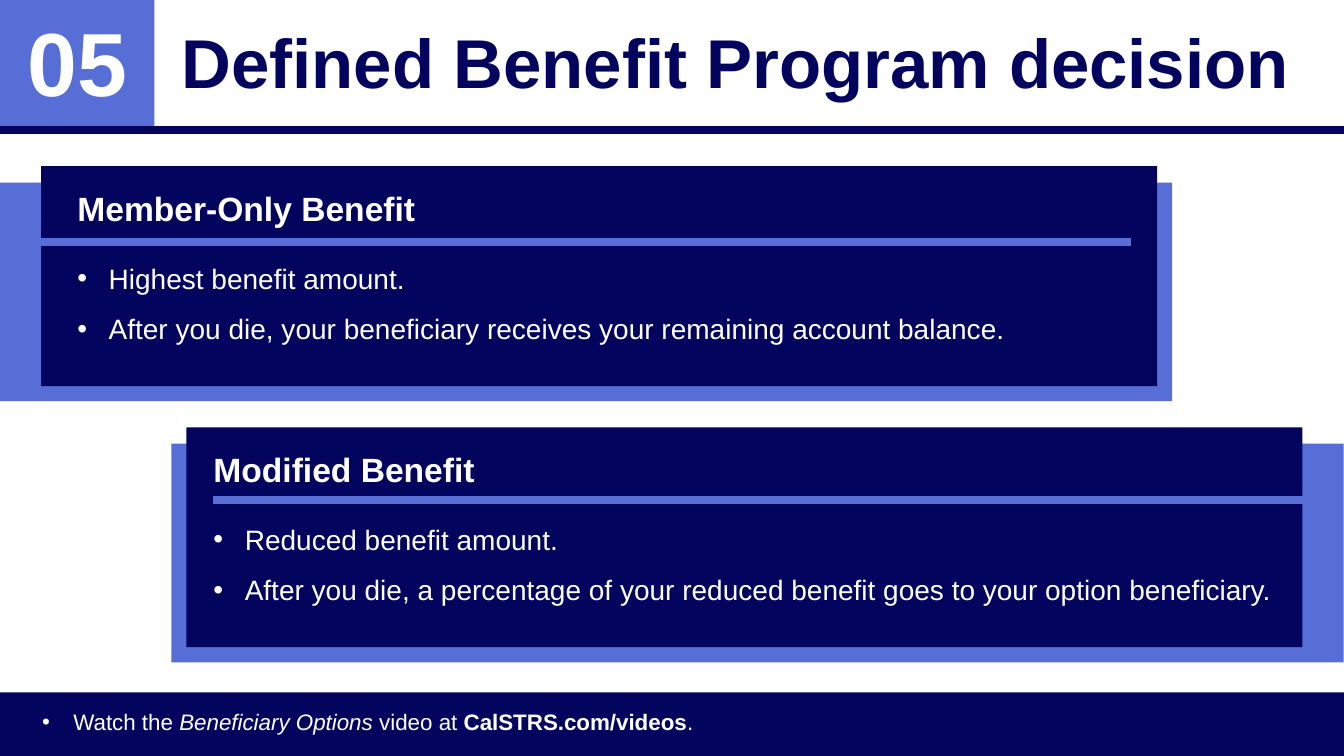
import pptx
import pptx.dml.color
import pptx.enum.shapes
import pptx.enum.text
import pptx.oxml
import pptx.oxml.ns
import pptx.util
from pptx.util import Cm

NAVY = "03045E"
PERIWINKLE = "576ED6"
WHITE = "FFFFFF"
FONT = "Arial"
SLIDE_WIDTH, SLIDE_HEIGHT = 33.87, 19.05
HEADER_HEIGHT = 3.28
FOOTER_TOP = 17.45
INDENT = 0.79


def rgb(hex_colour):
    """Turn a hex string into a colour."""
    return pptx.dml.color.RGBColor.from_string(hex_colour)


def add_block(slide, left, top, width, height, colour):
    """Add a plain filled rectangle."""
    block = slide.shapes.add_shape(
        pptx.enum.shapes.MSO_SHAPE.RECTANGLE, Cm(left), Cm(top), Cm(width), Cm(height))
    block.shadow.inherit = False
    block.fill.solid()
    block.fill.fore_color.rgb = rgb(colour)
    block.line.fill.background()


def add_rule(slide, left, right, y, colour):
    """Add a thick horizontal line."""
    rule = slide.shapes.add_connector(
        pptx.enum.shapes.MSO_CONNECTOR.STRAIGHT, Cm(left), Cm(y), Cm(right), Cm(y))
    rule.line.color.rgb = rgb(colour)
    rule.line.width = pptx.util.Pt(6)
    rule._element.spPr.append(pptx.oxml.parse_xml(
        f"<a:effectLst {pptx.oxml.ns.nsdecls('a')}/>"))


def add_text_frame(slide, left, top, width, height):
    """Add a wrapping text box that grows with its text and return its frame."""
    frame = slide.shapes.add_textbox(Cm(left), Cm(top), Cm(width), Cm(height)).text_frame
    frame.word_wrap = True
    frame.auto_size = pptx.enum.text.MSO_AUTO_SIZE.SHAPE_TO_FIT_TEXT
    return frame


def style_runs(paragraph, size, colour=WHITE, bold=False):
    """Format every run of a paragraph alike."""
    for run in paragraph.runs:
        run.font.name = FONT
        run.font.size = pptx.util.Pt(size)
        run.font.color.rgb = rgb(colour)
        run.font.bold = bold


def add_bullet(paragraph):
    """Give a paragraph a round bullet with a hanging indent."""
    properties = paragraph._p.get_or_add_pPr()
    properties.set("marL", str(Cm(INDENT)))
    properties.set("indent", str(-Cm(INDENT)))
    for bullet_part in ('buFont typeface="Arial"', 'buChar char="•"'):
        tag, attribute = bullet_part.split(" ")
        properties.append(pptx.oxml.parse_xml(
            f"<a:{tag} {pptx.oxml.ns.nsdecls('a')} {attribute}/>"))


def set_heading(frame, text, size, colour, alignment):
    """Fill a frame with one large, vertically centred bold line."""
    frame.text = text
    frame.word_wrap = True
    frame.auto_size = pptx.enum.text.MSO_AUTO_SIZE.NONE
    frame.vertical_anchor = pptx.enum.text.MSO_ANCHOR.MIDDLE
    heading = frame.paragraphs[0]
    heading.alignment = alignment
    heading.line_spacing = 0.9
    style_runs(heading, size, colour, bold=True)


def add_header(slide, number, title):
    """Build the numbered badge, the title and the rule below them."""
    add_block(slide, 0, 0, 3.89, HEADER_HEIGHT, PERIWINKLE)
    number_frame = add_text_frame(slide, 0.43, 0.48, 3.05, 2.44)
    set_heading(number_frame, number, 64, WHITE, pptx.enum.text.PP_ALIGN.CENTER)
    add_rule(slide, 0, SLIDE_WIDTH, HEADER_HEIGHT, NAVY)
    heading = slide.shapes.title
    heading.left, heading.top = Cm(4.32), Cm(0.03)
    heading.width, heading.height = Cm(29.11), Cm(HEADER_HEIGHT)
    set_heading(heading.text_frame, title, 49.3, NAVY, pptx.enum.text.PP_ALIGN.LEFT)


def add_benefit_card(slide, back_left, front_left, text_left, top, rule, title, points):
    """Build a two-layer card with a heading, a rule and bullet points."""
    add_block(slide, back_left, top + 0.41, 29.54, 5.51, PERIWINKLE)
    add_block(slide, front_left, top, 28.12, 5.54, NAVY)
    rule_left, rule_y = rule
    add_rule(slide, rule_left, rule_left + 27.64, rule_y, PERIWINKLE)
    frame = add_text_frame(slide, text_left, top + 0.41, 27.18, 4.27)
    frame.text = "\n".join([title, *points])
    heading, *bullets = frame.paragraphs
    heading.space_after = pptx.util.Pt(24)
    style_runs(heading, 24, bold=True)
    for bullet in bullets:
        add_bullet(bullet)
        bullet.space_after = pptx.util.Pt(12)
        style_runs(bullet, 20)


def add_footer(slide):
    """Build the bottom band with its pointer to the video."""
    add_block(slide, 0, FOOTER_TOP, SLIDE_WIDTH, SLIDE_HEIGHT - FOOTER_TOP, NAVY)
    pointer = add_text_frame(slide, 0.81, 17.73, 24.36, 0.94).paragraphs[0]
    add_bullet(pointer)
    for text in ("Watch the ", "Beneficiary Options ", "video at ", "CalSTRS.com/videos", "."):
        pointer.add_run().text = text
    style_runs(pointer, 16)
    pointer.runs[1].font.italic = True
    pointer.runs[3].font.bold = True


def main():
    """Build and save the slide."""
    deck = pptx.Presentation()
    deck.slide_width, deck.slide_height = Cm(SLIDE_WIDTH), Cm(SLIDE_HEIGHT)
    slide = deck.slides.add_slide(deck.slide_layouts[5])
    add_header(slide, "05", "Defined Benefit Program decision")
    add_footer(slide)
    add_benefit_card(slide, 0, 1.04, 1.7, 4.19, (0.86, 6.1), "Member-Only Benefit", [
        "Highest benefit amount.",
        "After you die, your beneficiary receives your remaining account balance."])
    add_benefit_card(slide, 4.32, 4.7, 5.13, 10.77, (5.36, 12.6), "Modified Benefit", [
        "Reduced benefit amount.",
        "After you die, a percentage of your reduced benefit goes to your option beneficiary."])
    deck.save("out.pptx")


if __name__ == "__main__":
    main()
